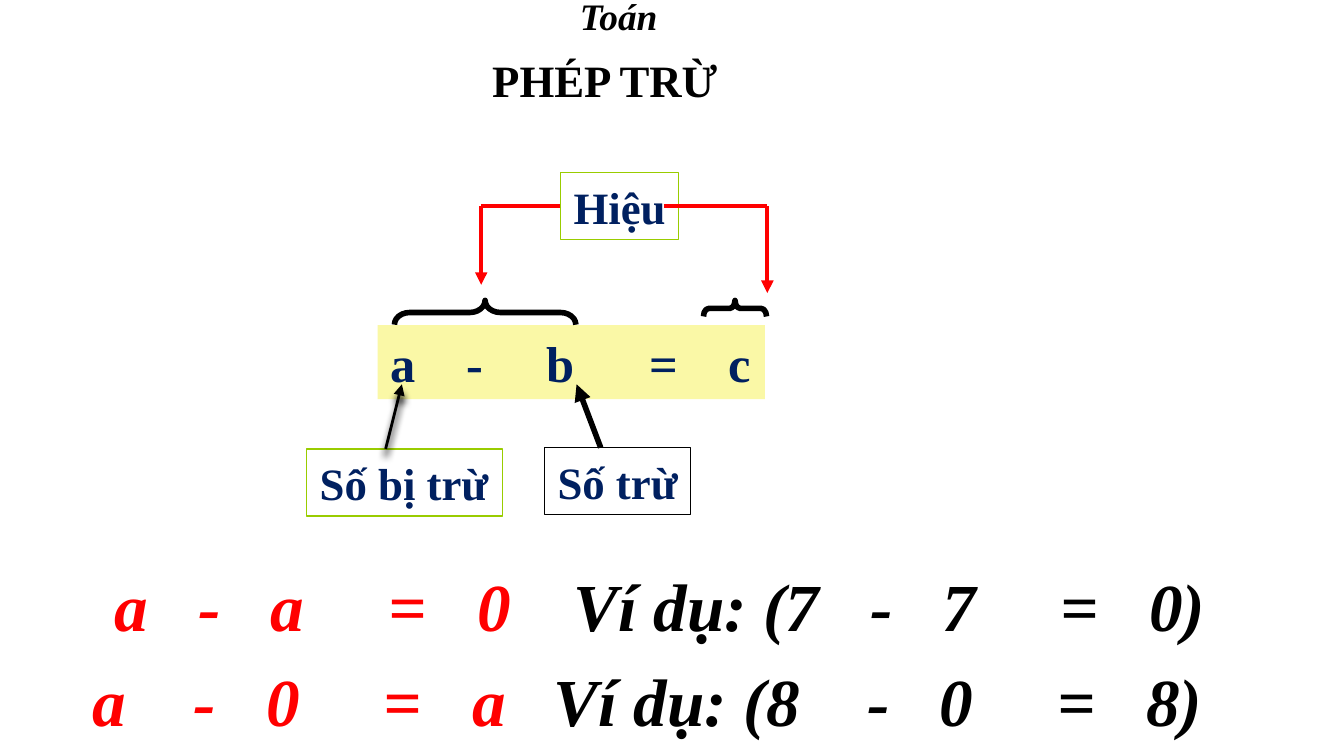
import pptx
import pptx.util
import pptx.dml.color
import pptx.enum.shapes
import pptx.enum.text
import pptx.oxml
import pptx.oxml.ns

Pt = pptx.util.Pt
SHAPE = pptx.enum.shapes.MSO_SHAPE
ALIGN = pptx.enum.text.PP_ALIGN

THEME = {
    "font": "Times New Roman",
    "black": "000000", "navy": "002060", "red": "FF0000",
    "green": "99CC00", "yellow": "FAF8A6",
    "subject": 20, "heading": 24, "label": 24, "equation": 27, "rule": 36,
}

# Places are left, top, width, height in points.
SUBJECT = ("Toán", (195.8, -7.2, 271.4, 31.7))
HEADING = ("PHÉP TRỪ", (115.9, 24.5, 416.2, 36))

EQUATION = ("a\t-\tb\t=\tc", (202.3, 174.2, 207.4, 39.6),
            (40.5, 83.25, 138.75, 181.1))

LABELS = {  # name: (place, border)
    "Số trừ": ((291.6, 239.8, 78.5, 36), "black"),
    "Số bị trừ": ((164.2, 240.5, 105.1, 36), "green"),
    "Hiệu": ((300.2, 92.5, 63.4, 36), "green"),
}

BRACES = [  # place before rotation, curl
    ((253.4, 118.8, 13, 97.2), 0.633),
    ((389.5, 148.3, 8.6, 33.8), 0.332),
]

BRANCH_Y = 110.5
BRANCHES = [  # inner x, outer x, arrow tip y
    (300.2, 257.8, 152.6),
    (355.7, 411.1, 157),
]

POINTERS = [  # start, tip, width, shadowed
    ((321.8, 239.8), (308.9, 205.9), 3, False),
    ((206.6, 240.5), (215.3, 205.9), 1.5, True),
]

RULES = [  # text, colour, place, left inset, tab stops
    ("a\t-\ta\t=\t0", "red", (54, 298.8, 226.8, 51.1), 7.2, (45, 84, 147, 194.6)),
    ("a\t-\t0\t=\ta", "red", (42.5, 349.9, 236.2, 51.1), 7.2, (54, 93, 156, 203.7)),
    ("Ví dụ: (7\t-\t7\t=\t0)", "black", (290.9, 298.8, 424.1, 51.1), 16.2,
     (159, 198, 261, 308.5)),
    ("Ví dụ: (8\t-\t0\t=\t8)", "black", (289.4, 349.9, 366.5, 51.1), 7.2,
     (168, 207, 270, 317.5)),
]


def rgb(name):
    return pptx.dml.color.RGBColor.from_string(THEME[name])


def points(values):
    return [Pt(value) for value in values]


def write(shape, text, size, color, italic=False, align=ALIGN.LEFT,
          wrap=True, tabs=(), inset=7.2):
    frame = shape.text_frame
    frame.word_wrap = wrap
    frame.auto_size = pptx.enum.text.MSO_AUTO_SIZE.NONE
    frame.vertical_anchor = pptx.enum.text.MSO_ANCHOR.TOP
    frame.margin_left = Pt(inset)
    paragraph = frame.paragraphs[0]
    paragraph.alignment = align
    if tabs:
        frame.margin_right = 0
        stops = pptx.oxml.ns.qn("a:tabLst")
        tab_list = paragraph._p.get_or_add_pPr().makeelement(stops, {})
        for stop in tabs:
            tab = tab_list.makeelement(pptx.oxml.ns.qn("a:tab"),
                                       {"pos": str(Pt(stop)), "algn": "l"})
            tab_list.append(tab)
        paragraph._p.get_or_add_pPr().append(tab_list)
    run = paragraph.add_run()
    run.text = text
    run.font.name = THEME["font"]
    run.font.size = Pt(THEME[size])
    run.font.bold = True
    run.font.italic = italic
    run.font.color.rgb = rgb(color)


def add_box(slide, place, fill=None, border=None, kind=SHAPE.RECTANGLE, width=0.75):
    box = slide.shapes.add_shape(kind, *points(place))
    box.shadow.inherit = False
    if fill:
        box.fill.solid()
        box.fill.fore_color.rgb = rgb(fill)
    else:
        box.fill.background()
    if border:
        box.line.color.rgb = rgb(border)
        box.line.width = Pt(width)
    else:
        box.line.fill.background()
    return box


def add_line(slide, start, end, color, width, arrow=False, shadowed=False):
    line = slide.shapes.add_connector(
        pptx.enum.shapes.MSO_CONNECTOR.STRAIGHT, *points(start + end))
    line.line.color.rgb = rgb(color)
    line.line.width = Pt(width)
    namespace = pptx.oxml.ns.nsdecls("a")
    if arrow:
        line.line._get_or_add_ln().append(
            pptx.oxml.parse_xml(f'<a:tailEnd {namespace} type="triangle"/>'))
    shadow = (f'<a:outerShdw blurRad="{Pt(4)}" dist="{Pt(4)}" dir="5400000">'
              '<a:srgbClr val="000000"><a:alpha val="97000"/></a:srgbClr>'
              '</a:outerShdw>') if shadowed else ""
    line._element.spPr.append(pptx.oxml.parse_xml(
        f"<a:effectLst {namespace}>{shadow}</a:effectLst>"))
    return line


def main():
    deck = pptx.Presentation()
    deck.slide_width, deck.slide_height = points((720, 405))
    slide = deck.slides.add_slide(deck.slide_layouts[5])

    text, place = HEADING
    title = slide.shapes.title
    title.left, title.top, title.width, title.height = points(place)
    write(title, text, "heading", "black", align=ALIGN.CENTER)
    text, place = SUBJECT
    write(slide.shapes.add_textbox(*points(place)), text, "subject", "black",
          italic=True, align=ALIGN.CENTER)

    text, place, tabs = EQUATION
    write(add_box(slide, place, fill="yellow"), text, "equation", "navy", tabs=tabs)

    labels = {}
    for text, (place, border) in LABELS.items():
        labels[text] = add_box(slide, place, border=border)
        write(labels[text], text, "label", "navy", wrap=False)

    for start, tip, width, shadowed in POINTERS:
        add_line(slide, start, tip, "black", width, arrow=True, shadowed=shadowed)

    for place, curl in BRACES:
        brace = add_box(slide, place, border="black", kind=SHAPE.RIGHT_BRACE, width=3)
        brace.rotation = 270
        brace.adjustments[0] = curl

    arms = []
    for inner, outer, tip in BRANCHES:
        corner = (outer, BRANCH_Y)
        arms.append(add_line(slide, (inner, BRANCH_Y), corner, "red", 2.25))
        add_line(slide, corner, (outer, tip), "red", 2.25, arrow=True)
    arms[0].begin_connect(labels["Hiệu"], 1)

    for text, color, place, inset, tabs in RULES:
        write(slide.shapes.add_textbox(*points(place)), text, "rule", color,
              italic=True, tabs=tabs, inset=inset)

    deck.save("out.pptx")


if __name__ == "__main__":
    main()
